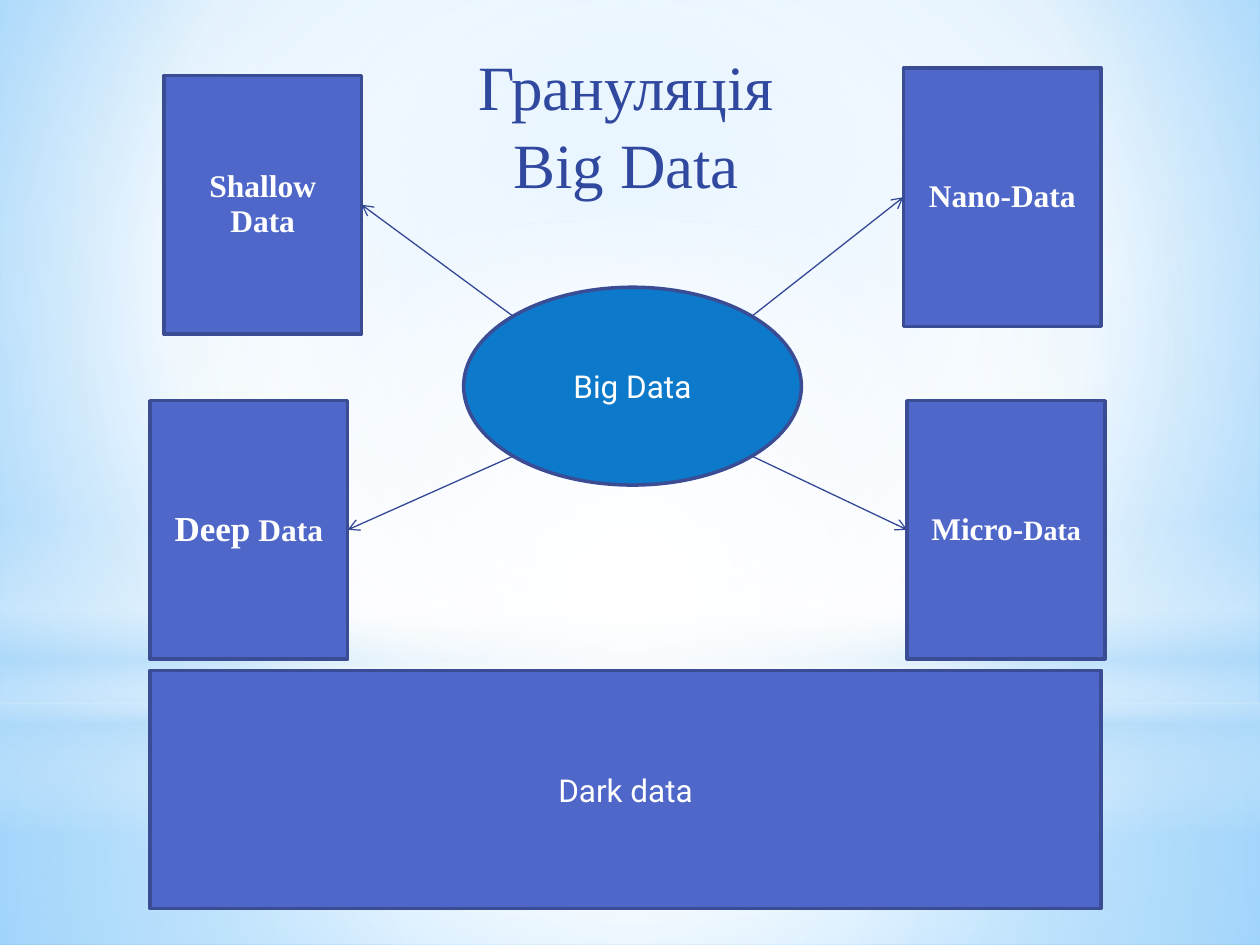
import math
from dataclasses import dataclass

from lxml import etree
from pptx import Presentation
from pptx import util as u
from pptx.dml.color import RGBColor
from pptx.enum import shapes, text
from pptx.oxml import ns


@dataclass(frozen=True)
class Theme:
    """Colours, fonts and type sizes of the slide."""
    block: str = "4E67C8"
    core: str = "0D79CA"
    outline: str = "3A4C94"
    arrow: str = "344896"
    title: str = "31489F"
    label: str = "FFFFFF"
    white: str = "FFFFFF"
    haze: str = "B4DCFA"
    sky: str = "9ED5FF"
    deep_sky: str = "5BB9FF"
    serif: str = "Times New Roman"
    sans: str = "Roboto"
    title_size: int = 36
    large: int = 20
    normal: int = 18
    small: int = 16


THEME = Theme()
CENTRE = (50, 50, 50, 50)


def inches(values):
    """Turn plain numbers into lengths."""
    return [u.Inches(value) for value in values]


def paint_gradient(owner, fill, stops, focus=None):
    """Fill the owner with (position, colour, opacity) stops, round a focus or downwards."""
    fill.gradient()
    gradient = owner.element.find(".//" + ns.qn("a:gradFill"))
    for child in list(gradient):
        gradient.remove(child)
    stop_list = etree.SubElement(gradient, ns.qn("a:gsLst"))
    for position, colour, opacity in stops:
        stop = etree.SubElement(stop_list, ns.qn("a:gs"), pos=str(position * 1000))
        tint = etree.SubElement(stop, ns.qn("a:srgbClr"), val=colour)
        if opacity < 100:
            etree.SubElement(tint, ns.qn("a:alpha"), val=str(opacity * 1000))
    if focus:
        route = etree.SubElement(gradient, ns.qn("a:path"), {"path": "circle"})
        edges = {side: str(share * 1000) for side, share in zip("ltrb", focus)}
        etree.SubElement(route, ns.qn("a:fillToRect"), edges)
    else:
        etree.SubElement(gradient, ns.qn("a:lin"), ang="5400000", scaled="0")


def add_backdrop(page):
    """Paint the sky, the horizon and the glow behind the diagram."""
    white, haze = THEME.white, THEME.haze
    sky = [(0, THEME.sky, 100), (60, white, 100), (100, THEME.deep_sky, 100)]
    paint_gradient(page, page.background.fill, sky, (20, 10, 20, 60))
    rectangle, oval = shapes.MSO_SHAPE.RECTANGLE, shapes.MSO_SHAPE.OVAL
    layers = [
        (rectangle, (0, 5.58, 10, 1.92),
         [(0, white, 91), (37, white, 76), (100, haze, 79)], CENTRE),
        (rectangle, (0, 0, 10, 5.58),
         [(0, white, 89), (48, white, 62), (100, haze, 79)], CENTRE),
        (rectangle, (0, 4.12, 10, 2.5),
         [(0, white, 0), (29, white, 30), (45, haze, 40),
          (55, white, 26), (65, haze, 60), (100, white, 0)], None),
        (oval, (0, 1.75, 10, 5.58), [(0, white, 100), (56, white, 0)], CENTRE),
    ]
    for kind, box, stops, focus in layers:
        layer = page.shapes.add_shape(kind, *inches(box))
        layer.shadow.inherit = False
        layer.line.fill.background()
        paint_gradient(layer, layer.fill, stops, focus)


def style_span(span, font, size, colour, bold=False):
    """Set the look of one run."""
    span.font.name = font
    span.font.size = u.Pt(size)
    span.font.bold = bold
    span.font.color.rgb = RGBColor.from_string(colour)


def add_title(page, box):
    """Place the title in front of the backdrop."""
    title = page.shapes.title
    title.element.getparent().append(title.element)
    title.left, title.top, title.width, title.height = inches(box)
    frame = title.text_frame
    frame.text = "Грануляція Big Data"
    frame.word_wrap = True
    frame.auto_size = text.MSO_AUTO_SIZE.NONE
    frame.vertical_anchor = text.MSO_ANCHOR.TOP
    para = frame.paragraphs[0]
    para.alignment = text.PP_ALIGN.CENTER
    para.line_spacing = 1.04
    style_span(para.runs[0], THEME.serif, THEME.title_size, THEME.title)


def add_node(page, kind, box, colour, parts, font, bold=False, spacing=1.0):
    """Draw an outlined shape labelled with (wording, size) parts."""
    node = page.shapes.add_shape(kind, *inches(box))
    node.shadow.inherit = False
    node.fill.solid()
    node.fill.fore_color.rgb = RGBColor.from_string(colour)
    node.line.color.rgb = RGBColor.from_string(THEME.outline)
    node.line.width = u.Pt(2)
    frame = node.text_frame
    frame.word_wrap = True
    frame.vertical_anchor = text.MSO_ANCHOR.MIDDLE
    para = frame.paragraphs[0]
    para.alignment = text.PP_ALIGN.CENTER
    para.line_spacing = spacing
    for wording, size in parts:
        span = para.add_run()
        span.text = wording
        style_span(span, font, size, THEME.label, bold)
    return node


def add_arrow(page, core, block):
    """Link the diagonal point of the core to the facing side of a block."""
    centre_x, centre_y = core.left + core.width / 2, core.top + core.height / 2
    to_right = block.left > centre_x
    below = block.top + block.height / 2 > centre_y
    reach = math.sqrt(0.5) / 2
    start_x = int(centre_x + core.width * reach * (1 if to_right else -1))
    start_y = int(centre_y + core.height * reach * (1 if below else -1))
    arrow = page.shapes.add_connector(
        shapes.MSO_CONNECTOR.STRAIGHT, start_x, start_y, start_x, start_y)
    arrow.end_connect(block, 1 if to_right else 3)
    arrow.line.color.rgb = RGBColor.from_string(THEME.arrow)
    arrow.line.width = u.Pt(0.75)
    etree.SubElement(arrow.line._get_or_add_ln(), ns.qn("a:tailEnd"), type="arrow")
    etree.SubElement(arrow.element.spPr, ns.qn("a:effectLst"))


def add_diagram(page):
    """Draw the core, its four kinds of data and the dark data beneath."""
    rectangle, oval = shapes.MSO_SHAPE.RECTANGLE, shapes.MSO_SHAPE.OVAL
    add_node(page, rectangle, (1.19, 5.32, 7.55, 1.89), THEME.block,
             [("Dark data", THEME.normal)], THEME.sans)
    kinds = [
        (1.19, 3.18, [("Deep", THEME.large), (" Data", THEME.normal)]),
        (7.2, 3.18, [("Micro-", THEME.normal), ("Data", THEME.small)]),
        (1.3, 0.6, [("Shallow Data", THEME.normal)]),
        (7.17, 0.54, [("Nano-Data", THEME.normal)]),
    ]
    blocks = [add_node(page, rectangle, (left, top, 1.57, 2.05), THEME.block,
                       parts, THEME.serif, bold=True, spacing=0.9)
              for left, top, parts in kinds]
    core = add_node(page, oval, (3.68, 2.28, 2.68, 1.57), THEME.core,
                    [("Big Data", THEME.normal)], THEME.sans)
    for block in blocks:
        add_arrow(page, core, block)


def main():
    """Build the slide and save it."""
    deck = Presentation()
    deck.slide_width, deck.slide_height = u.Inches(10), u.Inches(7.5)
    page = deck.slides.add_slide(deck.slide_layouts.get_by_name("Title Only"))
    add_backdrop(page)
    add_diagram(page)
    add_title(page, (3.35, 0.3, 3.24, 1.31))
    deck.save("out.pptx")


if __name__ == "__main__":
    main()
